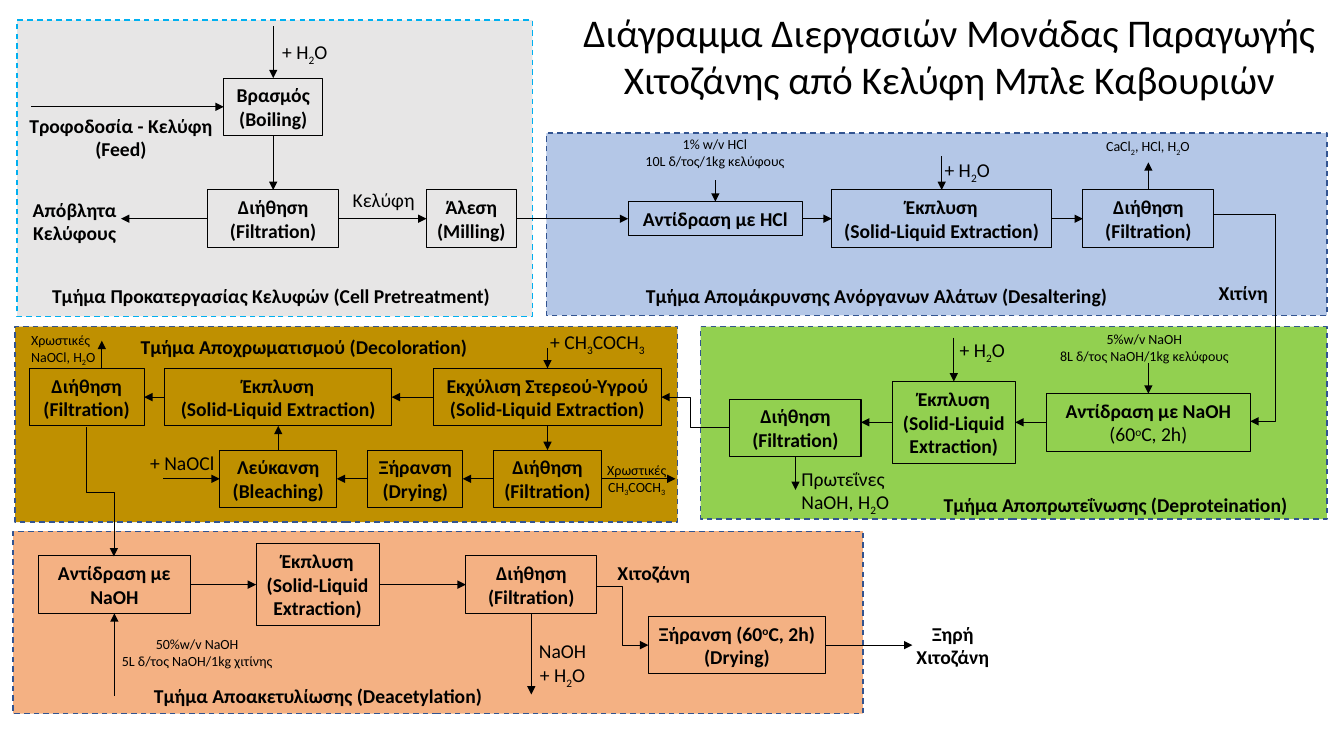
from dataclasses import dataclass
from typing import Any

from lxml.etree import SubElement
from pptx import Presentation
from pptx.dml.color import RGBColor
from pptx.enum.dml import MSO_LINE
from pptx.enum.shapes import MSO_CONNECTOR, MSO_SHAPE
from pptx.enum.text import MSO_ANCHOR, MSO_AUTO_SIZE, PP_ALIGN
from pptx.oxml.ns import qn
from pptx.util import Inches, Pt

BLACK = RGBColor(0x00, 0x00, 0x00)
GREY = RGBColor(0xE7, 0xE6, 0xE6)
CYAN = RGBColor(0x00, 0xB0, 0xF0)
NAVY = RGBColor(0x32, 0x54, 0x91)
BLUE = RGBColor(0xB4, 0xC7, 0xE7)
GREEN = RGBColor(0x92, 0xD0, 0x50)
ORANGE = RGBColor(0xF4, 0xB1, 0x83)
OCHRE = RGBColor(0xBF, 0x90, 0x00)

CELL = Inches(0.1)  # columns and rows of the page grid
LINE, TWO_LINES, THREE_LINES, SMALL_LINES = 3.4, 5.7, 8.1, 4.4
TOP, LEFT, BOTTOM, RIGHT = range(4)
BASELINES = {"_": "-25000", "^": "30000"}

FILTRATION = "Διήθηση (Filtration)"
WASHING = "Έκπλυση\n(Solid-Liquid Extraction)"
WATER = "+ Η_2Ο"


def write(shape, text, size=14, bold=False, align=PP_ALIGN.CENTER, wrap=True):
    """Fill a shape; _ lowers and ^ raises the next character, | ends bold."""
    frame = shape.text_frame
    frame.word_wrap = wrap
    frame.auto_size = MSO_AUTO_SIZE.SHAPE_TO_FIT_TEXT
    for number, line in enumerate(text.split("\n")):
        para = frame.paragraphs[0] if number == 0 else frame.add_paragraph()
        para.alignment = align
        para.font.name, para.font.size = "Calibri", Pt(size)
        para.font.bold, para.font.color.rgb = bold, BLACK
        for part, piece in enumerate(line.split("|")):
            write_spans(para, piece, plain=part > 0)


def write_spans(para, text, plain):
    pieces, mark = [["", None]], None
    for letter in text:
        if letter in BASELINES:
            mark = letter
        elif mark:
            pieces += [[letter, BASELINES[mark]], ["", None]]
            mark = None
        else:
            pieces[-1][0] += letter
    for words, baseline in pieces:
        if words:
            span = para.add_run()
            span.text = words
            if plain:
                span.font.bold = False
            if baseline:
                span.font._element.set("baseline", baseline)


def style_connector(connector):
    connector.line.color.rgb = BLACK
    connector.line.width = Pt(0.5)
    SubElement(connector.line._get_or_add_ln(), qn("a:tailEnd"), type="triangle")
    SubElement(connector._element.spPr, qn("a:effectLst"))


@dataclass
class Region:
    """A part of the page whose children are placed in cells from its corner."""
    page: Any
    left: float = 0
    top: float = 0

    def point(self, x, y):
        return round((self.left + x) * CELL), round((self.top + y) * CELL)

    def rectangle(self, x, y, width, height):
        shape = self.page.shapes.add_shape(
            MSO_SHAPE.RECTANGLE, *self.point(x, y), round(width * CELL), round(height * CELL))
        shape.shadow.inherit = False
        return shape

    def frame(self, width, height, fill, border=NAVY):
        panel = self.rectangle(0, 0, width, height)
        panel.fill.solid()
        panel.fill.fore_color.rgb = fill
        panel.line.color.rgb = border
        panel.line.width = Pt(1)
        panel.line.dash_style = MSO_LINE.DASH

    def step(self, text, x, y, width, height=TWO_LINES):
        """A process box centred on x, y."""
        box = self.rectangle(x - width / 2, y - height / 2, width, height)
        box.fill.background()
        box.line.color.rgb = BLACK
        box.line.width = Pt(0.75)
        box.text_frame.vertical_anchor = MSO_ANCHOR.MIDDLE
        write(box, text, bold=True)
        return box

    def label(self, text, x, y, width, height=LINE, **style):
        box = self.page.shapes.add_textbox(
            *self.point(x, y), round(width * CELL), round(height * CELL))
        write(box, text, **style)

    def water(self, x, y):
        self.label(WATER, x, y, 6.6, align=PP_ALIGN.LEFT, wrap=False)

    def arrow(self, start, end):
        """Each end is a point in cells or a (box, side) pair."""
        places = [self.point(*place) if isinstance(place[0], (int, float)) else None
                  for place in (start, end)]
        connector = self.page.shapes.add_connector(
            MSO_CONNECTOR.STRAIGHT, *(places[0] or (0, 0)), *(places[1] or (0, 0)))
        if places[0] is None:
            connector.begin_connect(*start)
        if places[1] is None:
            connector.end_connect(*end)
        style_connector(connector)

    def elbow(self, start, end, share=0.5, upright=False):
        """A bent arrow turning at a share of its run; upright leaves downwards."""
        if upright:
            (x1, y1), (x2, y2) = start, end
            x, y, run, rise = (x1 + x2) / 2, (y1 + y2) / 2, y2 - y1, x2 - x1
            start, end = (x + run / 2, y - rise / 2), (x - run / 2, y + rise / 2)
        connector = self.page.shapes.add_connector(
            MSO_CONNECTOR.ELBOW, *self.point(*start), *self.point(*end))
        properties = connector._element.spPr
        if upright:
            properties.find(qn("a:xfrm")).set("rot", "16200000")
        guides = properties.find(qn("a:prstGeom")).get_or_add_avLst()
        SubElement(guides, qn("a:gd"), name="adj1", fmla=f"val {round(share * 100000)}")
        style_connector(connector)


def draw_pretreatment(region):
    region.frame(51.1, 29.4, GREY, CYAN)
    row = 19.7
    boiling = region.step("Βρασμός\n(Boiling)", 25.4, 8.6, 9.8)
    filtration = region.step(FILTRATION, 25.4, row, 13)
    milling = region.step("Άλεση\n(Milling)", 45.05, row, 8.9)
    region.arrow((1.4, 8.6), (boiling, LEFT))
    region.arrow((25.4, 0.6), (boiling, TOP))
    region.arrow((boiling, BOTTOM), (filtration, TOP))
    region.arrow((filtration, RIGHT), (milling, LEFT))
    region.arrow((filtration, LEFT), (10.3, row))
    region.label("Τροφοδοσία - Κελύφη\n(Feed)", 0.1, 8.8, 20.4, TWO_LINES, bold=True, wrap=False)
    region.water(25.3, 1.5)
    region.label("Κελύφη", 31.9, 16.2, 8.9)
    region.label("Απόβλητα Κελύφους", 0, 17.1, 11.4, TWO_LINES, bold=True)
    region.label("Τμήμα Προκατεργασίας Κελυφών (Cell Pretreatment)", 0, 25.7, 50.4, bold=True)
    return milling


def draw_desaltering(region, milling):
    region.frame(77.4, 18.1, BLUE)
    row = 8.5
    reaction = region.step("Αντίδραση με HCl", 16.75, row, 17.3, LINE)
    washing = region.step(WASHING, 39.2, row, 21.8)
    filtration = region.step(FILTRATION, 59.7, row, 13)
    for source, target in ((milling, reaction), (reaction, washing), (washing, filtration)):
        region.arrow((source, RIGHT), (target, LEFT))
    region.arrow((16.75, 4.7), (reaction, TOP))
    region.arrow((39.2, 2.3), (washing, TOP))
    region.arrow((filtration, TOP), (59.7, 2.9))
    region.label("1% w/v HCl\n10L δ/τος/1kg κελύφους", 1.6, -0.2, 30.2, SMALL_LINES, size=10)
    region.label("CaCl_2, HCl, H_2O", 53.1, 0, 13.1, 2.7, size=10)
    region.water(38.5, 2)
    region.label("Χιτίνη", 65.5, 14.2, 7.2, bold=True)
    region.label("Τμήμα Απομάκρυνσης Ανόργανων Αλάτων (Desaltering)", 4.5, 14.5, 56.5, bold=True)


def draw_deproteination(region):
    region.frame(62.1, 19.1, GREEN)
    row = 9.5
    reaction = region.step("Αντίδραση με NaOH |(60^oC, 2h)", 44.4, row, 20.2)
    washing = region.step(WASHING, 25.1, row, 12.2, THREE_LINES)
    filtration = region.step(FILTRATION, 9.4, 10.05, 13)
    region.arrow((reaction, LEFT), (washing, RIGHT))
    region.arrow((washing, LEFT), (15.9, row))
    region.arrow((44.4, 3.6), (reaction, TOP))
    region.arrow((25.1, 1.1), (washing, TOP))
    region.arrow((filtration, BOTTOM), (9.4, 16.2))
    region.water(24.7, 0.6)
    region.label("5%w/v NaOH\n8L δ/τος NaOH/1kg κελύφους", 33, -0.1, 22, SMALL_LINES, size=10)
    region.label("Πρωτεΐνες\nNaOH, Η_2Ο", 9, 13.4, 10.8, TWO_LINES, align=PP_ALIGN.LEFT, wrap=False)
    region.label("Τμήμα Αποπρωτεΐνωσης (Deproteination)", 20.6, 16, 41.1, bold=True)


def draw_decoloration(region):
    region.frame(65.7, 19.4, OCHRE)
    upper, lower = 7, 15.1
    extraction = region.step("Εκχύλιση Στερεού-Υγρού\n(Solid-Liquid Extraction)", 52.8, upper, 22.6)
    washing = region.step(WASHING, 26.1, upper, 22.5)
    final_filtration = region.step(FILTRATION, 7.1, upper, 11.4)
    filtration = region.step(FILTRATION, 52.8, lower, 10.8)
    drying = region.step("Ξήρανση\n(Drying)", 39.7, lower, 9.4)
    bleaching = region.step("Λεύκανση\n(Bleaching)", 26.1, lower, 11.6)
    for source, target in ((extraction, washing), (washing, final_filtration),
                           (filtration, drying), (drying, bleaching)):
        region.arrow((source, LEFT), (target, RIGHT))
    region.arrow((extraction, BOTTOM), (filtration, TOP))
    region.arrow((bleaching, TOP), (washing, BOTTOM))
    region.arrow((52.8, 2.1), (extraction, TOP))
    region.arrow((8.6, 4.15), (8.6, 1.4))
    region.arrow((filtration, RIGHT), (65.5, lower))
    region.arrow((14.7, lower), (bleaching, LEFT))
    region.label("+ CH_3COCH_3", 51.5, -0.2, 12.5)
    region.label("Τμήμα Αποχρωματισμού (Decoloration)", 7.7, 0.3, 41.9, bold=True)
    region.label("Χρωστικές\nNaOCl, H_2O", 0.6, 0, 9.1, SMALL_LINES, size=10, align=PP_ALIGN.LEFT)
    region.label("Χρωστικές\nCH_3COCH_3", 56.7, 12.9, 9.9, SMALL_LINES, size=10)
    region.label("+ NaOCl", 12.4, 11.8, 10.9, align=PP_ALIGN.LEFT)


def draw_deacetylation(region):
    region.frame(84.3, 18.1, ORANGE)
    row, drying_row = 5.3, 11.3
    reaction = region.step("Αντίδραση με NaOH", 10.05, row, 15.1)
    washing = region.step(WASHING, 30.2, row, 12.2, THREE_LINES)
    filtration = region.step(FILTRATION, 51.4, row, 13)
    drying = region.step("Ξήρανση (60^oC, 2h)\n(Drying)", 71.8, drying_row, 17.6)
    region.arrow((reaction, RIGHT), (washing, LEFT))
    region.arrow((washing, RIGHT), (filtration, LEFT))
    region.arrow((filtration, BOTTOM), (51.4, 16.2))
    region.arrow((10.05, 16.3), (reaction, BOTTOM))
    region.elbow((57.9, 5.5), (63, drying_row))
    region.arrow((drying, RIGHT), (89.2, drying_row))
    region.label("NaOH\n+ Η_2Ο", 51.1, 10.2, 6.8, TWO_LINES, wrap=False)
    region.label("Χιτoζάνη", 58, 2.5, 11.1, bold=True)
    region.label("Ξηρή Χιτoζάνη", 87.1, 8.5, 12.2, TWO_LINES, bold=True)
    region.label("50%w/v NaOH\n5L δ/τος NaOH/1kg χιτίνης", 9.4, 9.9, 17.7, SMALL_LINES, size=10)
    region.label("Τμήμα Αποακετυλίωσης (Deacetylation)", 2, 14.7, 56.5, bold=True)


def main():
    deck = Presentation()
    deck.slide_width, deck.slide_height = Inches(13.33), Inches(7.5)
    page = deck.slides.add_slide(deck.slide_layouts[6])
    milling = draw_pretreatment(Region(page, 1.7, 2))
    draw_desaltering(Region(page, 54.2, 13.2), milling)
    draw_deproteination(Region(page, 69.5, 32.4))
    draw_decoloration(Region(page, 1.5, 32.4))
    draw_deacetylation(Region(page, 1.3, 52.7))
    whole = Region(page)
    whole.label("Διάγραμμα Διεργασιών Μονάδας Παραγωγής Χιτοζάνης από Κελύφη Μπλε Καβουριών",
                56.6, 0.3, 75.1, 10.4, size=28)
    whole.elbow((120.4, 21.3), (124, 41.8), share=1.69)
    whole.elbow((72.4, 42.4), (65.6, 39.4), share=0.58)
    whole.elbow((8.6, 42.4), (11.3, 55.2), upright=True)
    deck.save("out.pptx")


if __name__ == "__main__":
    main()
